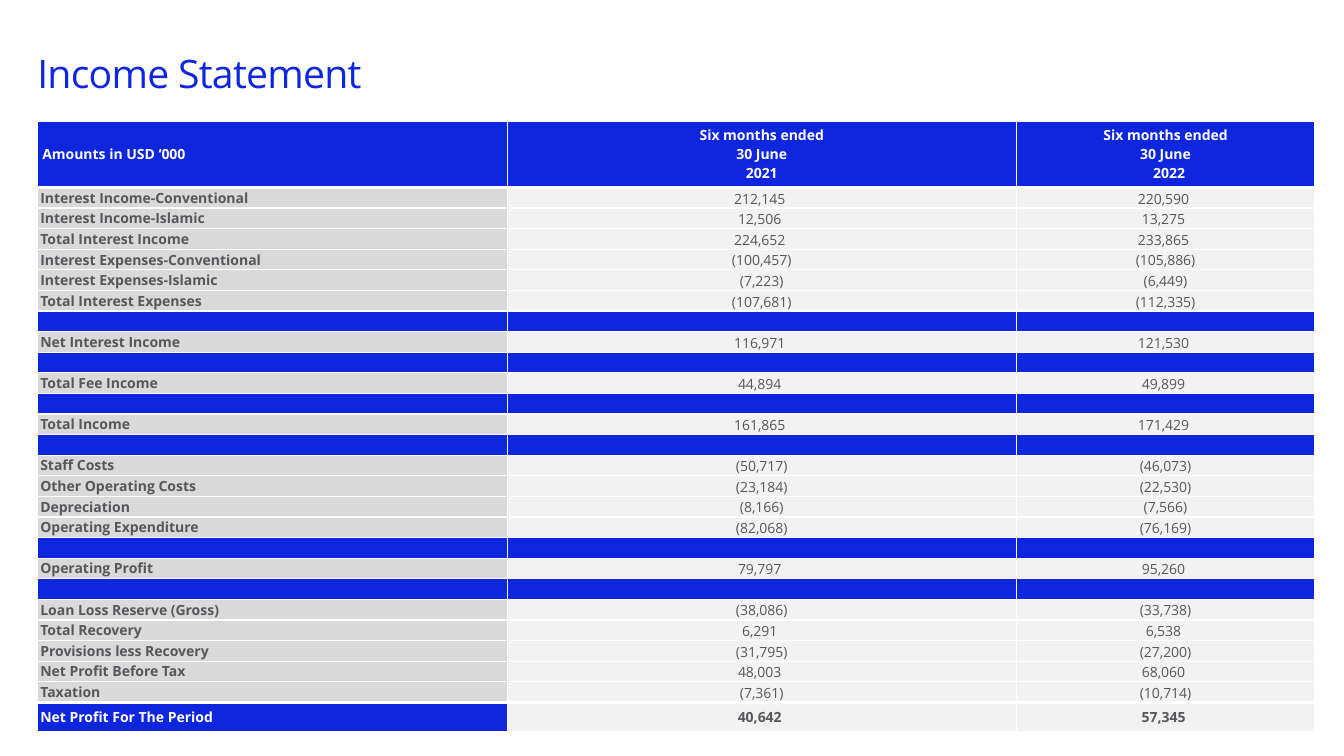
from lxml.etree import SubElement as Sub
from pptx import Presentation
from pptx.dml.color import RGBColor as RGB
from pptx.enum.text import MSO_ANCHOR as Anchor, PP_ALIGN as Align
from pptx.oxml.ns import qn
from pptx.util import Inches as In, Pt

BLUE, WHITE, TEXT = "0E26DE", "FFFFFF", "57565A"
GREY, PALE = "D9D9D9", "F2F2F2"
EDGE, WIDE, TOP, TALL = 0.37, 12.67, 1.2, 6.06
HEAD, LAST = 0.66, 0.29

rows = [
    ("Amounts in USD ‘000", "Six months ended\n30 June\n2021", "Six months ended\n30 June\n2022"),
    ("Interest Income-Conventional", "212,145", "220,590"),
    ("Interest Income-Islamic", "12,506", "13,275"),
    ("Total Interest Income", "224,652", "233,865"),
    ("Interest Expenses-Conventional", "(100,457)", "(105,886)"),
    ("Interest Expenses-Islamic", "(7,223)", "(6,449)"),
    ("Total Interest Expenses", "(107,681)", "(112,335)"),
    ("", "", ""),
    ("Net Interest Income", "116,971", "121,530"),
    ("", "", ""),
    ("Total Fee Income", "44,894", "49,899"),
    ("", "", ""),
    ("Total Income", "161,865", "171,429"),
    ("", "", ""),
    ("Staff Costs", "(50,717)", "(46,073)"),
    ("Other Operating Costs", "(23,184)", "(22,530)"),
    ("Depreciation", "(8,166)", "(7,566)"),
    ("Operating Expenditure", "(82,068)", "(76,169)"),
    ("", "", ""),
    ("Operating Profit", "79,797", "95,260"),
    ("", "", ""),
    ("Loan Loss Reserve (Gross)", "(38,086)", "(33,738)"),
    ("Total Recovery", "6,291", "6,538"),
    ("Provisions less Recovery", "(31,795)", "(27,200)"),
    ("Net Profit Before Tax", "48,003", "68,060"),
    ("Taxation", "(7,361)", "(10,714)"),
    ("Net Profit For The Period", "40,642", "57,345"),
]
end = len(rows) - 1


def paint(part, tone):
    if hasattr(part, "solid"):
        part.solid()
        part = part.fore_color
    part.rgb = RGB.from_string(tone)


def put(item, form):
    for name, value in form.items():
        setattr(item, name, value)


deck = Presentation()
put(deck, {"slide_width": In(13.33), "slide_height": In(7.5)})
slide = deck.slides.add_slide(deck.slide_layouts[6])

frame = slide.shapes.add_textbox(In(EDGE), In(0.31), In(WIDE), In(0.89)).text_frame
put(frame, {"word_wrap": True, "vertical_anchor": Anchor.MIDDLE, "margin_left": 0,
            "margin_right": 0, "margin_top": 0, "margin_bottom": 0})
title = frame.paragraphs[0]
title.line_spacing = 0.86
run = title.add_run()
run.text = "Income Statement"
put(run.font, {"name": "Open Sans", "size": Pt(28)})
paint(run.font.color, BLUE)
run.font._element.set("spc", "-50")

table = slide.shapes.add_table(len(rows), 3, In(EDGE), In(TOP), In(WIDE), In(TALL)).table
table.horz_banding = False
for col, share in zip(table.columns, (4.66, 5.05, 2.96)):
    col.width = In(share)
step = (TALL - HEAD - LAST) / (end - 1)

for r, row in enumerate(rows):
    table.rows[r].height = In({0: HEAD, end: LAST}.get(r, step))
    for c, text in enumerate(row):
        cell = table.cell(r, c)
        head, label = r == 0, c == 0
        solid = head or not text or (label and r == end)
        pad = {"margin_left": 0, "margin_right": 0, "margin_top": 0, "margin_bottom": 0}
        if head:
            rim = In(0.03 if label else 0.05)
            pad = {"margin_left": In(0.05), "margin_right": In(0.05),
                   "margin_top": rim, "margin_bottom": rim}
        elif label:
            pad["margin_left"] = In(0.03)
        elif text:
            tail = 0.01 if text.endswith(")") else 0.05
            pad.update(margin_left=In(0.01), margin_right=In(tail), margin_top=In(0.01))
        mid = head or label or r == end
        put(cell, {**pad, "vertical_anchor": Anchor.MIDDLE if mid else Anchor.BOTTOM})

        props = cell._tc.get_or_add_tcPr()
        for side in "LRTB":
            thick = (head and side == "B") or (r == end and side == "T")
            line = Sub(props, qn("a:ln" + side), w=str(Pt(3 if thick else 1)))
            Sub(Sub(line, qn("a:solidFill")), qn("a:srgbClr"), val=WHITE)
        paint(cell.fill, BLUE if solid else GREY if label else PALE)

        cell.text = text
        for para in cell.text_frame.paragraphs:
            para.alignment = Align.LEFT if label else Align.CENTER
            if para.text == "2022":
                para._p.get_or_add_pPr().set("marL", str(In(0.07)))
            for run in para.runs:
                put(run.font, {"name": "Open Sans", "size": Pt(10), "bold": mid})
                paint(run.font.color, WHITE if solid else TEXT)
            if not text:
                Sub(para._p, qn("a:endParaRPr"), sz="1000")

deck.save("out.pptx")
